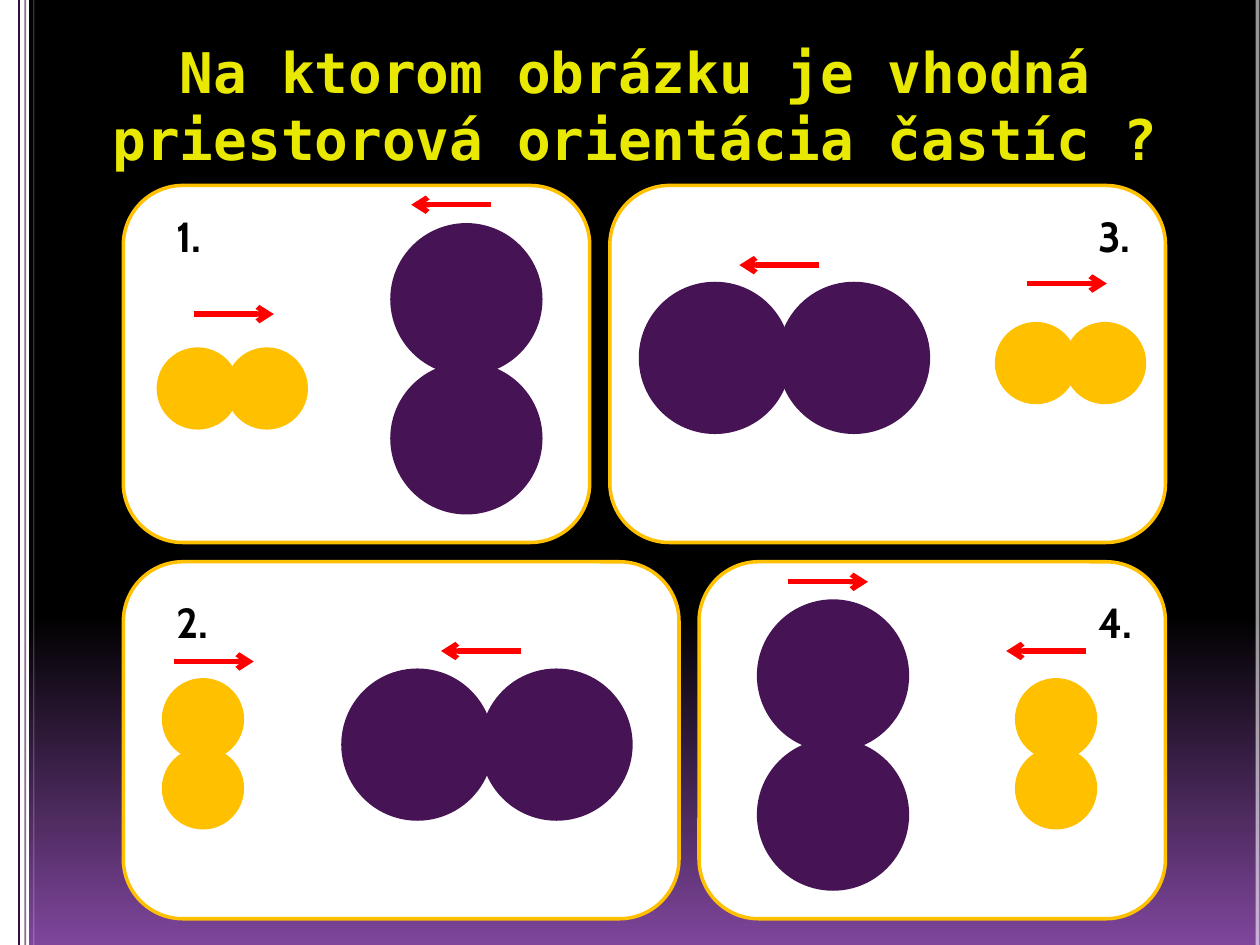
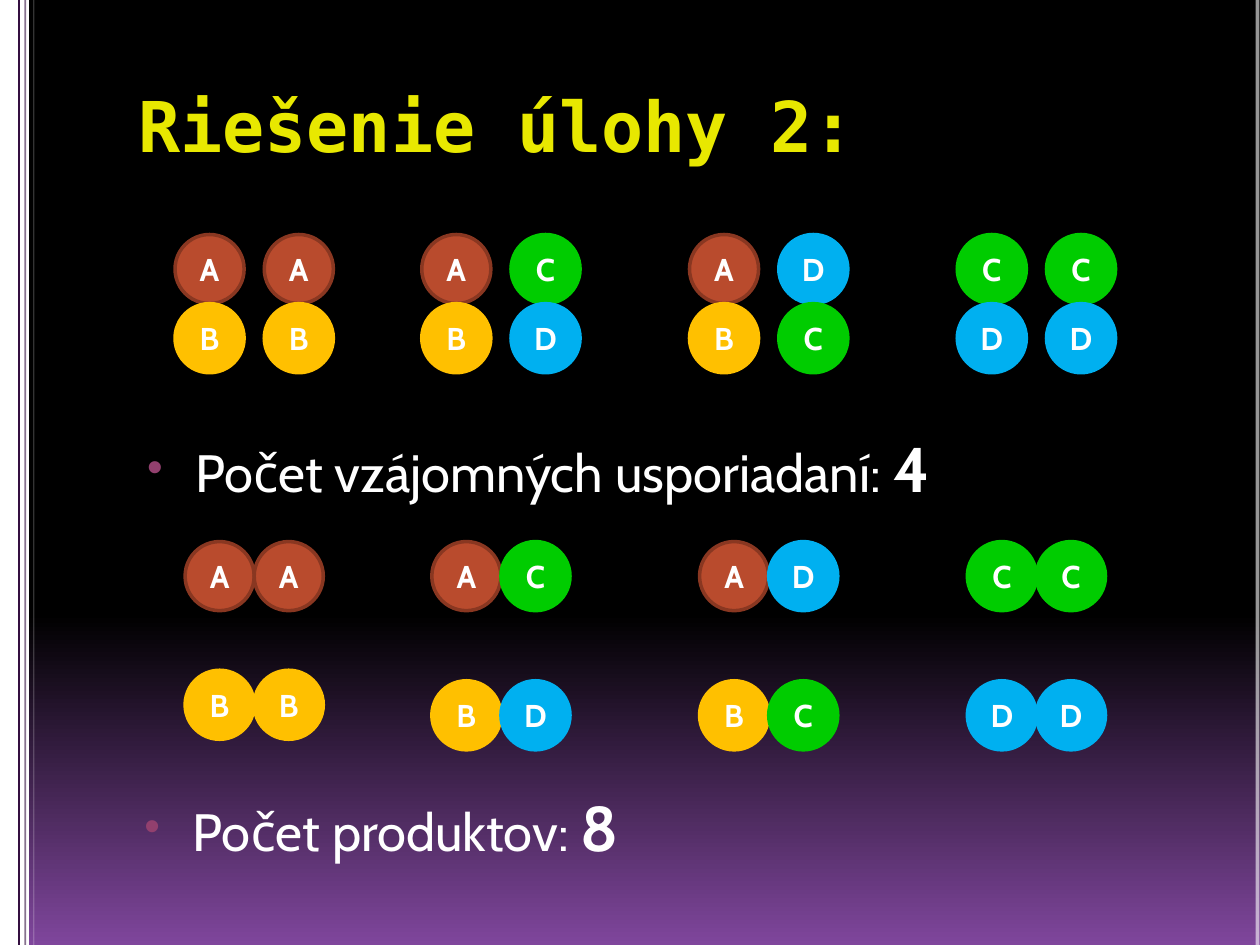
from lxml import etree
from pptx import Presentation, util as u
from pptx.dml.color import RGBColor
from pptx.enum import shapes, text
from pptx.oxml.ns import qn

Pt = u.Pt
WIDTH, HEIGHT = 720, 540
BODY_FONT, TITLE_FONT = "Cabin", "DejaVu Sans Mono"
WHITE, BLACK, GOLD, PLUM, RED = "FFFFFF", "000000", "FFC000", "461455", "FF0000"
YELLOW, DARK_PURPLE, VIOLET, MAUVE = "E8E800", "340F40", "7F469C", "92406E"
ATOMS = {"A": ("B94B2D", "893721"), "B": (GOLD, GOLD),
         "C": ("00CC00", "00CC00"), "D": ("00B0F0", "00B0F0")}
ATOM = 39.5
SMALL = {"d": 45, "step": 39.5, "color": GOLD}
LARGE = {"d": 85, "step": 79.5, "color": PLUM}
ARROW = 45.5
LEFT, RIGHT = -1, 1


def rgb(value):
    return RGBColor.from_string(value)


def add_sub(parent, tag, **attrs):
    return etree.SubElement(parent, qn(tag), attrs)


def add_shape(parent, kind, box, fill, line=None):
    sp = parent.shapes.add_shape(kind, *map(Pt, box))
    sp.shadow.inherit = False
    sp.fill.solid()
    sp.fill.fore_color.rgb = rgb(fill)
    if line:
        sp.line.color.rgb = rgb(line)
        sp.line.width = Pt(2)
    else:
        sp.line.fill.background()
    return sp


def add_line(parent, start, end, color, width, alpha=None, arrow=False):
    cx = parent.shapes.add_connector(shapes.MSO_CONNECTOR.STRAIGHT,
                                     *map(Pt, (*start, *end)))
    cx.line.color.rgb = rgb(color)
    cx.line.width = Pt(width)
    ln = cx.line._ln
    if alpha:
        add_sub(ln.find(".//" + qn("a:srgbClr")), "a:alpha", val=str(alpha * 1000))
    if arrow:
        add_sub(ln, "a:tailEnd", type="arrow")
    add_sub(cx._element.spPr, "a:effectLst")


def add_run(p, words, size, color, bold=True, font=BODY_FONT):
    r = p.add_run()
    r.text = words
    for name, value in {"size": Pt(size), "bold": bold, "name": font}.items():
        setattr(r.font, name, value)
    r.font.color.rgb = rgb(color)


def add_text(parent, box, **frame):
    """Add a wrapping text box and return its first paragraph."""
    tf = parent.shapes.add_textbox(*map(Pt, box)).text_frame
    for name, value in {"word_wrap": True, **frame}.items():
        setattr(tf, name, value)
    return tf.paragraphs[0]


def add_base(prs):
    """Add a slide with the gradient background and the side stripes."""
    slide = prs.slides.add_slide(prs.slide_layouts[6])
    fill = slide.background.fill
    fill.gradient()
    fill.gradient_angle = 270
    for stop, position, color in zip(fill.gradient_stops, (0.65, 1), (BLACK, VIOLET)):
        stop.position = position
        stop.color.rgb = rgb(color)
    add_shape(slide, shapes.MSO_SHAPE.RECTANGLE, (0, 0, 16.5, HEIGHT), WHITE)
    for x, color, width, alpha in ((10.8, DARK_PURPLE, 1, None), (14.4, DARK_PURPLE, 1, 59),
                                   (19.4, WHITE, 0.25, 59), (718.6, WHITE, 2.25, 59)):
        add_line(slide, (x, 0), (x, HEIGHT), color, width, alpha)
    return slide


def add_title(slide, box, words, size, align):
    p = add_text(slide, box, margin_top=Pt(6.5))
    p.alignment = align
    add_run(p, words, size, YELLOW, font=TITLE_FONT)


def add_molecule(parent, x, y, size, upright):
    """Draw two touching atoms, stacked when upright and side by side otherwise."""
    for i in range(2):
        shift = i * size["step"]
        left, top = (x, y + shift) if upright else (x + shift, y)
        add_shape(parent, shapes.MSO_SHAPE.OVAL, (left, top, size["d"], size["d"]),
                  size["color"], size["color"])


def add_panel(slide, box, number, number_at, molecules):
    """Draw one numbered case; molecule and arrow places are relative to the box."""
    x, y = box[:2]
    group = slide.shapes.add_group_shape()
    add_shape(group, shapes.MSO_SHAPE.ROUNDED_RECTANGLE, box, WHITE, GOLD)
    for size, (dx, dy), upright, (ax, ay), direction in molecules:
        add_molecule(group, x + dx, y + dy, size, upright)
        start = (x + ax, y + ay)
        add_line(group, start, (start[0] + direction * ARROW, start[1]), RED, 3, arrow=True)
    p = add_text(group, (x + number_at[0], y + number_at[1], 40, 36))
    add_run(p, number, 24, BLACK)


def add_atoms(slide, x, y, rows, dx, dy):
    """Draw a group of lettered atoms, one string of letters per row."""
    group = slide.shapes.add_group_shape()
    for i, row in enumerate(rows):
        for j, letter in enumerate(row):
            sp = add_shape(group, shapes.MSO_SHAPE.OVAL,
                           (x + j * dx, y + i * dy, ATOM, ATOM), *ATOMS[letter])
            tf = sp.text_frame
            for side in ("left", "top", "right", "bottom"):
                setattr(tf, f"margin_{side}", 0)
            tf.vertical_anchor = text.MSO_ANCHOR.MIDDLE
            p = tf.paragraphs[0]
            p.alignment = text.PP_ALIGN.CENTER
            add_run(p, letter, 18, WHITE)


def add_answer(slide, x, y, label, count):
    p = add_text(slide, (x, y, 612, 55.5))
    p.space_before = Pt(7)
    pPr = p._p.get_or_add_pPr()
    pPr.set("marL", str(Pt(32.4)))
    pPr.set("indent", str(-Pt(27.4)))
    add_sub(add_sub(pPr, "a:buClr"), "a:srgbClr", val=MAUVE)
    add_sub(pPr, "a:buSzPct", val="85000")
    add_sub(pPr, "a:buFont", typeface="Arial")
    add_sub(pPr, "a:buChar", char="•")
    add_run(p, label, 30, WHITE, bold=False)
    add_run(p, count, 36, WHITE)


def orientation_slide(prs):
    slide = add_base(prs)
    add_title(slide, (42.5, 15, 641.5, 72),
              "Na ktorom obrázku je vhodná priestorová orientácia častíc ?",
              32, text.PP_ALIGN.CENTER)
    left, right, tops, height = 70.5, 666, (106, 321), 204
    narrow, wide = 266.5, 317.5
    panels = [
        ("1.", left, 0, narrow, (23, 11),
         [(SMALL, (20, 93.5), False, (40.5, 73.5), RIGHT),
          (LARGE, (153.5, 22.5), True, (210, 11), LEFT)]),
        ("3.", right - wide, 0, wide, (272, 11),
         [(SMALL, (221, 79), False, (238.5, 56), RIGHT),
          (LARGE, (17.5, 56), False, (119.5, 45.5), LEFT)]),
        ("2.", left, 1, wide, (23, 16.5),
         [(SMALL, (23, 67.5), True, (29, 57), RIGHT),
          (LARGE, (125.5, 62), False, (227, 51), LEFT)]),
        ("4.", right - narrow, 1, narrow, (221, 16.5),
         [(SMALL, (181.5, 67.5), True, (221, 51), LEFT),
          (LARGE, (34, 22.5), True, (51, 11.5), RIGHT)]),
    ]
    for number, x, row, width, number_at, molecules in panels:
        add_panel(slide, (x, tops[row], width, height), number, number_at, molecules)


def solution_slide(prs):
    slide = add_base(prs)
    add_title(slide, (72, 40.5, 612, 72), "Riešenie úlohy 2:", 40, text.PP_ALIGN.LEFT)
    add_answer(slide, 72, 242, "Počet vzájomných usporiadaní: ", "4")
    add_answer(slide, 70.5, 447, "Počet produktov: ", "8")
    arrangements = [(100, ("AA", "BB"), 383), (241, ("AC", "BD"), 389),
                    (394, ("AD", "BC"), 389), (547, ("CC", "DD"), 389)]
    for x, rows, lower in arrangements:
        add_atoms(slide, x, 134, rows, 51, ATOM)
        for product, y in zip(rows, (309.5, lower)):
            add_atoms(slide, x + 5.75, y, [product], ATOM, 0)


def main():
    prs = Presentation()
    prs.slide_width, prs.slide_height = Pt(WIDTH), Pt(HEIGHT)
    orientation_slide(prs)
    solution_slide(prs)
    prs.save("out.pptx")


if __name__ == "__main__":
    main()
